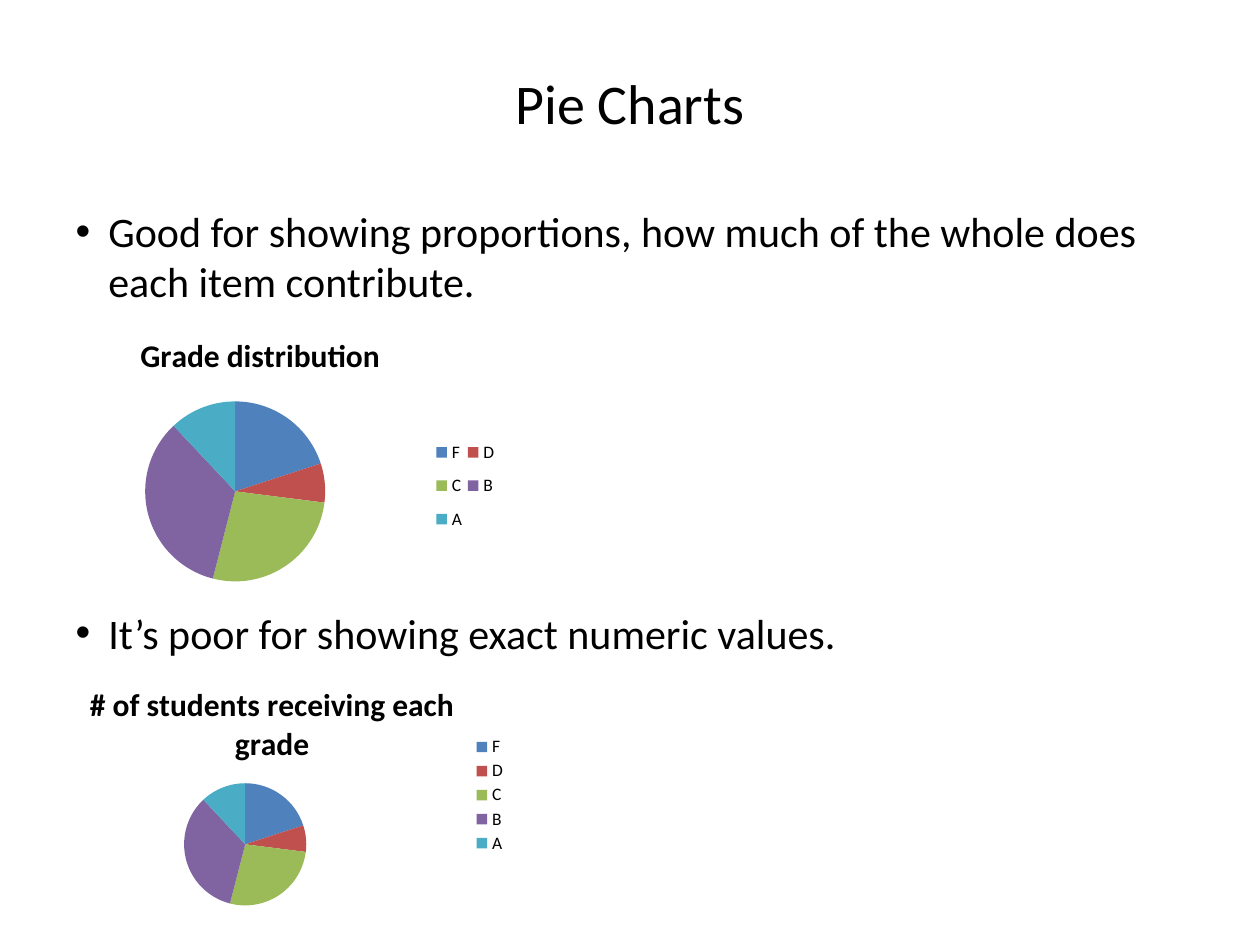
"""Build a slide on what pie charts are good and poor for."""
from lxml import etree
from pptx import Presentation
from pptx.chart.data import CategoryChartData
from pptx.dml.color import RGBColor
from pptx.enum import chart as ch, text as tx
from pptx.oxml.ns import qn
from pptx.util import Pt


def style(font, size, bold=False, color="000000"):
    font.name, font.size, font.bold = "Calibri", Pt(size), bold
    font.color.rgb = RGBColor.from_string(color)


def place(node, index, box, inner=False):
    for old in node.findall(qn("c:layout")):
        node.remove(old)
    layout = etree.Element(qn("c:layout"))
    node.insert(index, layout)
    manual = etree.SubElement(layout, qn("c:manualLayout"))
    pairs = [("layoutTarget", "inner")] if inner else []
    pairs += [("xMode", "edge"), ("yMode", "edge"), *zip("xywh", box)]
    for tag, val in pairs:
        etree.SubElement(manual, qn("c:" + tag)).set("val", str(val))


prs = Presentation()
prs.slide_width, prs.slide_height = Pt(720), Pt(540)
slide = prs.slides.add_slide(prs.slide_layouts[1])
title, body = slide.placeholders

title.left, title.top, title.width, title.height = Pt(36), Pt(21.6), Pt(648), Pt(74)
title.text_frame.text = "Pie Charts"
title.text_frame.vertical_anchor = tx.MSO_ANCHOR.MIDDLE
head = title.text_frame.paragraphs[0]
head.alignment = tx.PP_ALIGN.CENTER
style(head.font, 32)

body.left, body.top, body.width, body.height = Pt(36), Pt(113.8), Pt(648), Pt(396)
body.text_frame.text = (
    "Good for showing proportions, how much of the whole does each item contribute.\n"
    "It’s poor for showing exact numeric values."
)
for para, gap in zip(body.text_frame.paragraphs, (4.8, 172)):
    para.space_before = Pt(gap)
    props = para._p.get_or_add_pPr()
    props.set("marL", str(Pt(18.7)))
    props.set("indent", str(Pt(-18.7)))
    style(para.font, 24)

data = CategoryChartData()
data.categories = list("FDCBA")
data.add_series("Series 1", (20, 7, 27, 34, 12))
colors = "4F81BD", "C0504D", "9BBB59", "8064A2", "4BACC6"
pies = [
    ("Grade distribution", (5.8, 180, 285.8, 162.7),
     (0.27, 0.3, 0.36, 0.64), (0.84, 0.4, 0.14, 0.4)),
    ("# of students receiving each grade", (15.8, 380.2, 279.4, 148.3),
     (0.32, 0.45, 0.25, 0.48), (0.9, 0.26, 0.09, 0.48)),
]
for name, box, plot, key in pies:
    frame = slide.shapes.add_chart(ch.XL_CHART_TYPE.PIE, *map(Pt, box), data)
    chart = frame.chart
    style(chart.font, 10)
    chart.has_title = True
    chart.chart_title.text_frame.text = name
    style(chart.chart_title.text_frame.paragraphs[0].font, 18, True)
    chart.has_legend = True
    chart.legend.position = ch.XL_LEGEND_POSITION.RIGHT
    chart.legend.include_in_layout = False
    style(chart.legend.font, 10)
    chart.plots[0].vary_by_categories = True
    for i, color in enumerate(colors):
        fill = chart.plots[0].series[0].points[i].format.fill
        fill.solid()
        fill.fore_color.rgb = RGBColor.from_string(color)
    place(chart._chartSpace.find(".//" + qn("c:plotArea")), 0, plot, True)
    place(chart._chartSpace.find(".//" + qn("c:legend")), 1, key)

prs.save("out.pptx")
